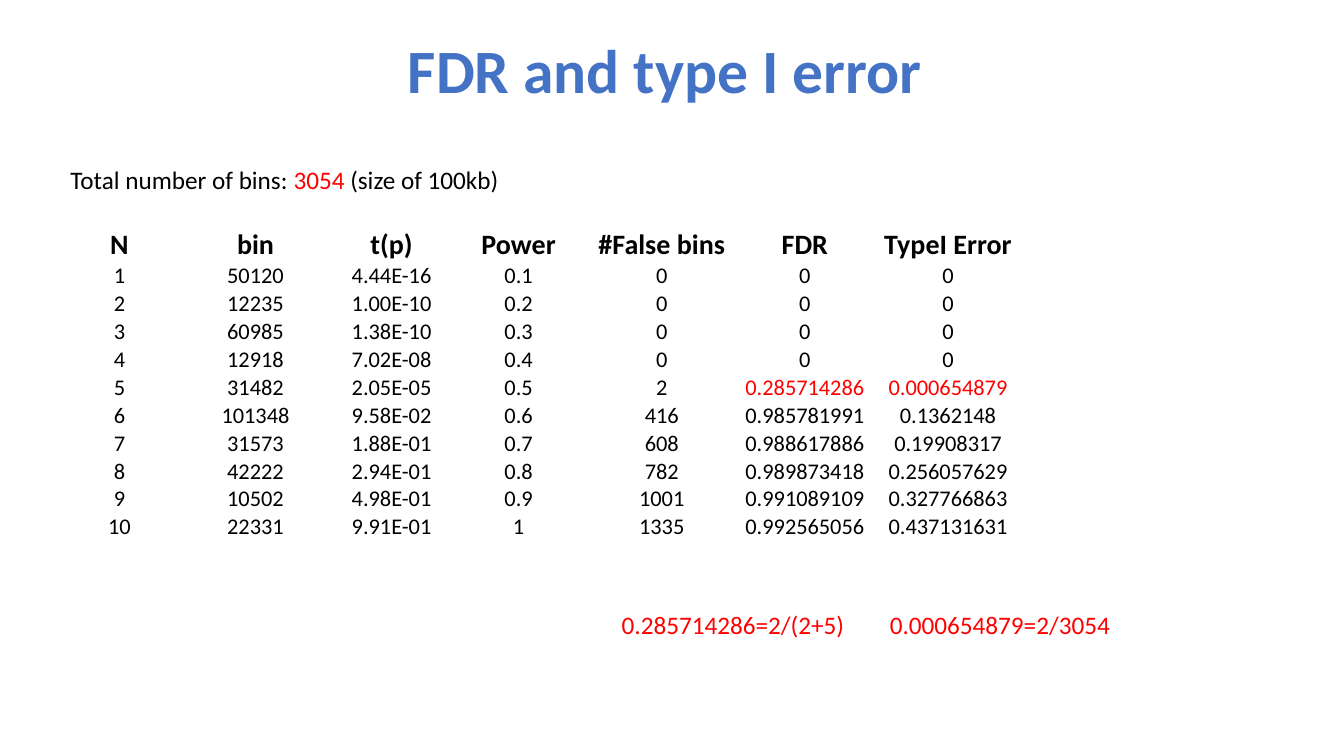
from dataclasses import dataclass

from pptx import Presentation
from pptx.dml.color import RGBColor
from pptx.enum.text import MSO_ANCHOR, MSO_AUTO_SIZE, PP_ALIGN
from pptx.util import Pt


@dataclass(frozen=True)
class Theme:
    face: str = "Calibri"
    ink: str = "000000"
    mark: str = "FF0000"
    head: str = "4472C4"
    title: int = 44
    label: int = 20
    note: int = 18
    body: int = 16


COL, ROW = 97.2, 15.12
TOP, STEP = 162, 102.24
MARKED = {"0.285714286", "0.000654879"}

BINS = [
    ("N", "bin", "t(p)"),
    ("1", "50120", "4.44E-16"),
    ("2", "12235", "1.00E-10"),
    ("3", "60985", "1.38E-10"),
    ("4", "12918", "7.02E-08"),
    ("5", "31482", "2.05E-05"),
    ("6", "101348", "9.58E-02"),
    ("7", "31573", "1.88E-01"),
    ("8", "42222", "2.94E-01"),
    ("9", "10502", "4.98E-01"),
    ("10", "22331", "9.91E-01"),
]
RATES = [
    ("Power", "#False bins", "FDR", "TypeI Error"),
    ("0.1", "0", "0", "0"),
    ("0.2", "0", "0", "0"),
    ("0.3", "0", "0", "0"),
    ("0.4", "0", "0", "0"),
    ("0.5", "2", "0.285714286", "0.000654879"),
    ("0.6", "416", "0.985781991", "0.1362148"),
    ("0.7", "608", "0.988617886", "0.19908317"),
    ("0.8", "782", "0.989873418", "0.256057629"),
    ("0.9", "1001", "0.991089109", "0.327766863"),
    ("1", "1335", "0.992565056", "0.437131631"),
]


def dress(item, values):
    """Set each named format value on the item."""
    for name, value in values.items():
        setattr(item, name, value)


class Painter:
    def __init__(self, slide, theme):
        self.slide, self.theme = slide, theme

    def runs(self, para, parts, size, bold=False):
        """Add runs given as (text, colour) pairs."""
        for text, color in parts:
            run = para.add_run()
            run.text = text
            dress(run.font, {"name": self.theme.face, "size": Pt(size), "bold": bold})
            run.font.color.rgb = RGBColor.from_string(color)

    def text(self, area, parts, size, bold=False, frame=None, para=None):
        """Add a text box; frame and para hold further format values."""
        box = self.slide.shapes.add_textbox(*map(Pt, area)).text_frame
        dress(box, {"word_wrap": True, **(frame or {})})
        line = box.paragraphs[0]
        dress(line, para or {})
        self.runs(line, parts, size, bold)

    def cell(self, cell, text, head):
        theme = self.theme
        dress(cell, {
            "vertical_anchor": MSO_ANCHOR.BOTTOM,
            "margin_left": Pt(0.72),
            "margin_right": Pt(0.72),
            "margin_top": Pt(0.72),
            "margin_bottom": Pt(0),
        })
        cell.fill.background()
        line = cell.text_frame.paragraphs[0]
        line.alignment = PP_ALIGN.CENTER
        color = theme.mark if text in MARKED else theme.ink
        self.runs(line, [(text, color)], theme.label if head else theme.body, head)

    def table(self, left, rows):
        count, width = len(rows), len(rows[0])
        area = (left, TOP, width * COL, count * ROW)
        grid = self.slide.shapes.add_table(count, width, *map(Pt, area)).table
        dress(grid, {"first_row": False, "horz_banding": False})
        for i, row in enumerate(rows):
            grid.rows[i].height = Pt(ROW)
            for j, text in enumerate(row):
                self.cell(grid.cell(i, j), text, i == 0)


def main():
    deck = Presentation()
    dress(deck, {"slide_width": Pt(960), "slide_height": Pt(540)})
    theme = Theme()
    pen = Painter(deck.slides.add_slide(deck.slide_layouts[6]), theme)

    pen.text((61.2, 0, 828, 104.4), [("FDR and type I error", theme.head)],
             theme.title, True, {"vertical_anchor": MSO_ANCHOR.MIDDLE},
             {"alignment": PP_ALIGN.CENTER, "line_spacing": 0.9})

    grow = {"auto_size": MSO_AUTO_SIZE.SHAPE_TO_FIT_TEXT}
    total = [("Total number of bins: ", theme.ink), ("3054", theme.mark),
             (" (size of 100kb)", theme.ink)]
    pen.text((43.2, 113.76, 661.68, 28.8), total, theme.note, frame=grow)

    pen.table(36.72, BINS)
    for k, column in enumerate(zip(*RATES)):
        pen.table(321.84 + k * STEP, [(text,) for text in column])

    sums = [(437.04, "0.285714286=2/(2+5)"), (628.56, "0.000654879=2/3054")]
    for left, text in sums:
        pen.text((left, 432, 191.52, 28.8), [(text, theme.mark)],
                 theme.note, frame=grow)

    deck.save("out.pptx")


if __name__ == "__main__":
    main()
